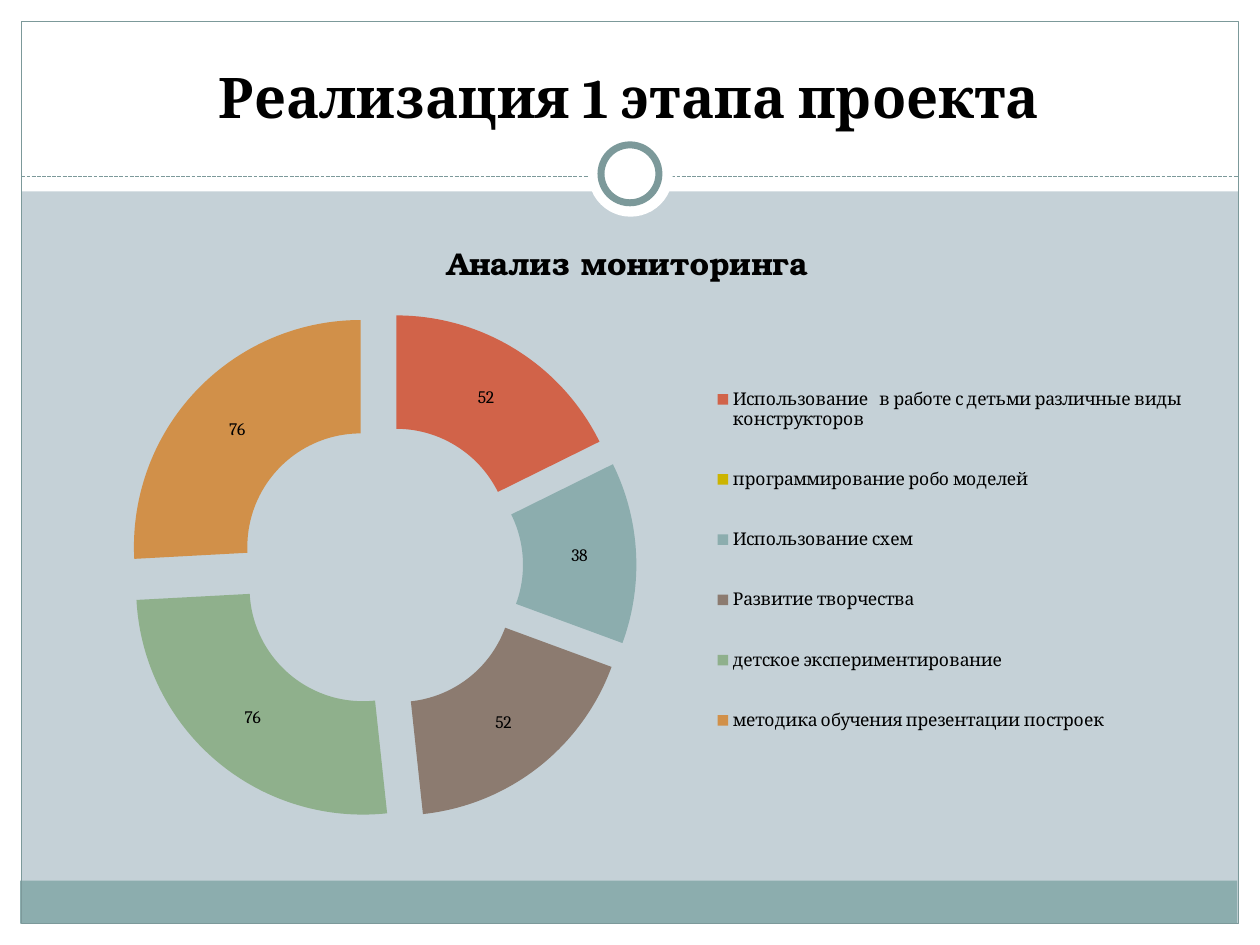
from lxml import etree
from pptx import Presentation
from pptx.chart.data import CategoryChartData
from pptx.dml.color import RGBColor
from pptx.enum.chart import XL_CHART_TYPE, XL_LEGEND_POSITION
from pptx.enum.dml import MSO_LINE
from pptx.enum.shapes import MSO_CONNECTOR, MSO_SHAPE
from pptx.enum.text import MSO_ANCHOR, PP_ALIGN
from pptx.oxml import parse_xml
from pptx.oxml.ns import nsdecls, qn
from pptx.util import Inches, Pt

RECTANGLE = MSO_SHAPE.RECTANGLE
OVAL = MSO_SHAPE.OVAL
STRAIGHT = MSO_CONNECTOR.STRAIGHT
SQUARE_DOT = MSO_LINE.SQUARE_DOT
BOTTOM = MSO_ANCHOR.BOTTOM
CENTER = PP_ALIGN.CENTER
DOUGHNUT = XL_CHART_TYPE.DOUGHNUT_EXPLODED
LEGEND_RIGHT = XL_LEGEND_POSITION.RIGHT
BLACK, WHITE, TEAL, DARK_TEAL = "000000", "FFFFFF", "8CADAE", "7C999A"
BODY_FONT = "Cambria"
CHART_TITLE = "Анализ мониторинга"


def color(value):
    return RGBColor.from_string(value)


def set_layout(element, following_tag, x, y, width, height):
    for old_layout in element.findall(qn("c:layout")):
        element.remove(old_layout)
    layout = parse_xml(
        f'<c:layout {nsdecls("c")}><c:manualLayout>'
        '<c:xMode val="edge"/><c:yMode val="edge"/>'
        f'<c:x val="{x}"/><c:y val="{y}"/><c:w val="{width}"/><c:h val="{height}"/>'
        '</c:manualLayout></c:layout>'
    )
    element.find(qn(following_tag)).addprevious(layout)


presentation = Presentation()
presentation.slide_width = Inches(10)
presentation.slide_height = Inches(7.5)
slide = presentation.slides.add_slide(presentation.slide_layouts[6])
slide.background.fill.solid()
slide.background.fill.fore_color.rgb = color("C5D1D7")

frame_parts = [
    (RECTANGLE, 0, 7.33, 10, 0.17, WHITE, None),
    (RECTANGLE, 0, 0, 10, 1.52, WHITE, None),
    (RECTANGLE, 0, 0, 0.17, 7.5, WHITE, None),
    (RECTANGLE, 9.83, 0, 0.17, 7.5, WHITE, None),
    (RECTANGLE, 0.16, 6.99, 9.66, 0.34, TEAL, None),
    (RECTANGLE, 0.17, 0.17, 9.66, 7.16, None, 0.75),
    ("divider", 0.17, 1.4, 9.66, 0, None, 0.75),
    (OVAL, 4.67, 1.05, 0.67, 0.67, WHITE, None),
    (OVAL, 4.77, 1.15, 0.46, 0.46, WHITE, 4),
]
for kind, left, top, width, height, fill, line_width in frame_parts:
    if kind == "divider":
        shape = slide.shapes.add_connector(
            STRAIGHT,
            Inches(left), Inches(top), Inches(left + width), Inches(top + height),
        )
        shape.line.dash_style = SQUARE_DOT
        etree.SubElement(shape.element.spPr, qn("a:effectLst"))
    else:
        shape = slide.shapes.add_shape(
            kind, Inches(left), Inches(top), Inches(width), Inches(height)
        )
        shape.shadow.inherit = False
        if fill:
            shape.fill.solid()
            shape.fill.fore_color.rgb = color(fill)
        else:
            shape.fill.background()
    if line_width:
        shape.line.color.rgb = color(DARK_TEAL)
        shape.line.width = Pt(line_width)
    else:
        shape.line.fill.background()

title_box = slide.shapes.add_textbox(Inches(0.33), Inches(0.25), Inches(9.33), Inches(0.83))
title_box.text_frame.word_wrap = True
title_box.text_frame.vertical_anchor = BOTTOM
paragraph = title_box.text_frame.paragraphs[0]
paragraph.alignment = CENTER
run = paragraph.add_run()
run.text = "Реализация 1 этапа проекта"
run.font.name = BODY_FONT
run.font.size = Pt(32)
run.font.bold = True
run.font.color.rgb = color(BLACK)

results = [
    ("Использование   в работе с детьми различные виды конструкторов", 52, "D16349"),
    ("программирование робо моделей", 0, "CCB400"),
    ("Использование схем", 38, TEAL),
    ("Развитие творчества", 52, "8C7B70"),
    ("детское экспериментирование", 76, "8FB08C"),
    ("методика обучения презентации построек", 76, "D19049"),
]
chart_data = CategoryChartData()
chart_data.categories = [name for name, value, fill in results]
chart_data.add_series(CHART_TITLE, [value for name, value, fill in results])
chart = slide.shapes.add_chart(
    DOUGHNUT, Inches(0.33), Inches(1.67), Inches(9.3), Inches(5), chart_data
).chart
chart.font.name = BODY_FONT
chart.font.size = Pt(10)
chart.font.color.rgb = color(BLACK)

chart.has_title = True
run = chart.chart_title.text_frame.paragraphs[0].add_run()
run.text = CHART_TITLE
run.font.name = "TeX Gyre Bonum"
run.font.size = Pt(18)
run.font.bold = True
run.font.color.rgb = color(BLACK)
chart.chart_title.include_in_layout = False

chart.has_legend = True
chart.legend.position = LEGEND_RIGHT
chart.legend.include_in_layout = False
set_layout(chart.legend._element, "c:overlay", 0.57, 0.22, 0.41, 0.67)

plot = chart.plots[0]
plot.vary_by_categories = True
set_layout(plot._element.getparent(), "c:doughnutChart", 0.07, 0.16, 0.44, 0.81)
series = plot.series[0]
for explosion in series._element.findall(qn("c:explosion")):
    series._element.remove(explosion)
series._element.find(qn("c:tx")).addnext(
    parse_xml(f'<c:explosion {nsdecls("c")} val="25"/>')
)
for index, (name, value, fill) in enumerate(results):
    point_fill = series.points[index].format.fill
    point_fill.solid()
    point_fill.fore_color.rgb = color(fill)
plot.has_data_labels = True
plot.data_labels.show_value = True
plot.data_labels.show_percentage = False

presentation.save("out.pptx")
